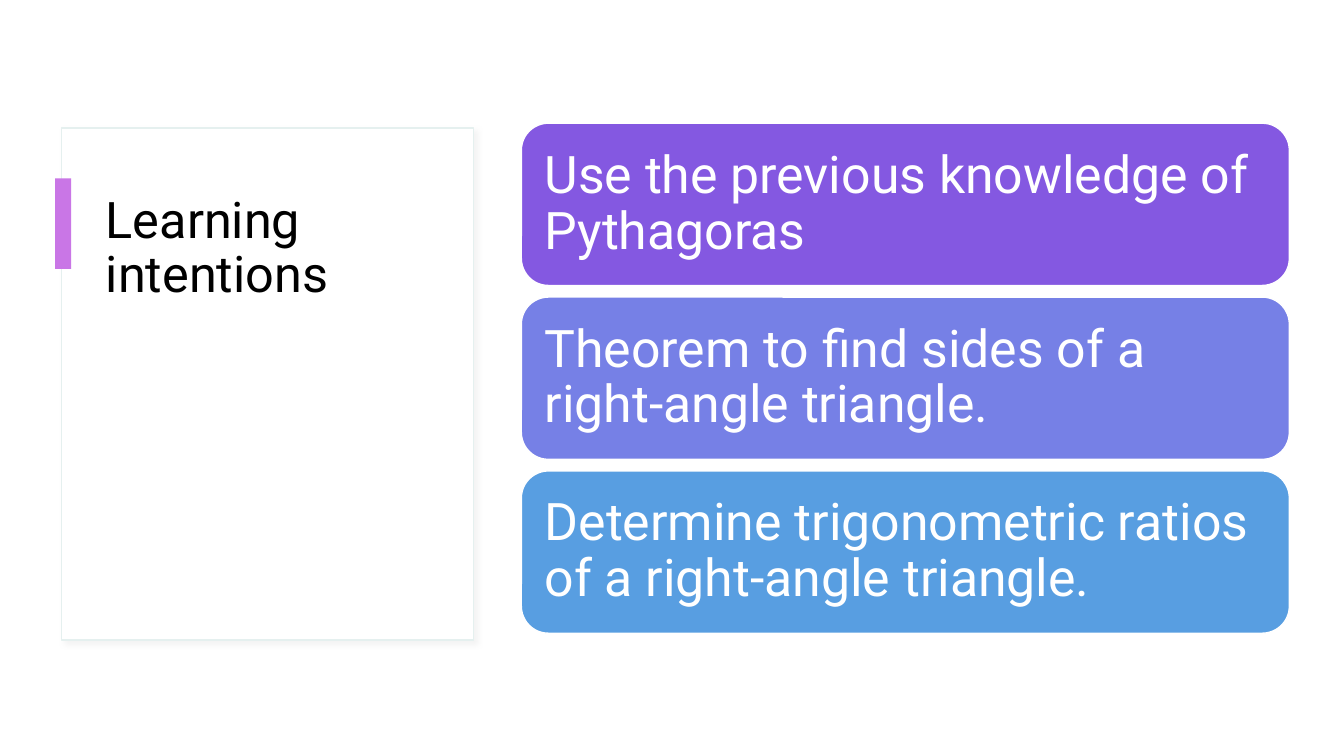
from dataclasses import dataclass

from lxml.etree import SubElement
from pptx import Presentation
from pptx.dml.color import RGBColor
from pptx.enum.shapes import MSO_SHAPE as Shape
from pptx.enum.text import MSO_ANCHOR as Anchor, MSO_AUTO_SIZE as AutoSize, PP_ALIGN as Align
from pptx.oxml.ns import qn
from pptx.shapes.autoshape import Shape as AutoShape
from pptx.slide import Slide
from pptx.text.text import TextFrame
from pptx.util import Pt

WHITE = RGBColor(0xFF, 0xFF, 0xFF)
BLACK = RGBColor(0x00, 0x00, 0x00)
PANEL_LINE = RGBColor(0xE5, 0xF0, 0xEF)
SHADOW = RGBColor(0xD9, 0xD9, 0xD9)
ACCENT = RGBColor(0xC9, 0x76, 0xE6)
PURPLE = RGBColor(0x84, 0x58, 0xE1)
INDIGO = RGBColor(0x76, 0x80, 0xE6)
BLUE = RGBColor(0x58, 0x9E, 0xE1)

FONT = "Roboto"
CARD_TOP = 88
CARD_PITCH = 124.2


@dataclass(frozen=True)
class Box:
    left: float
    top: float
    width: float
    height: float


@dataclass(frozen=True)
class Intention:
    text: str
    color: RGBColor


INTENTIONS = [
    Intention("Use the previous knowledge of Pythagoras", PURPLE),
    Intention("Theorem to find sides of a right-angle triangle.", INDIGO),
    Intention("Determine trigonometric ratios of a right-angle triangle.", BLUE),
]


def add_block(slide: Slide, kind: Shape, box: Box, fill: RGBColor,
              line: RGBColor | None = None) -> AutoShape:
    sp = slide.shapes.add_shape(kind, Pt(box.left), Pt(box.top), Pt(box.width), Pt(box.height))
    sp.shadow.inherit = False
    sp.fill.solid()
    sp.fill.fore_color.rgb = fill
    if line is None:
        sp.line.fill.background()
    else:
        sp.line.color.rgb = line
        sp.line.width = Pt(1)
    return sp


def add_soft_shadow(sp: AutoShape) -> None:
    effects = sp.element.spPr.find(qn("a:effectLst"))
    shadow = SubElement(effects, qn("a:outerShdw"), blurRad=str(Pt(4)), dist=str(Pt(3)),
                        dir=str(45 * 60000), algn="tl", rotWithShape="0")
    color = SubElement(shadow, qn("a:srgbClr"), val=str(SHADOW))
    SubElement(color, qn("a:alpha"), val="30000")


def write_text(tf: TextFrame, text: str, size: float, color: RGBColor, anchor: Anchor) -> None:
    tf.text = text
    tf.word_wrap = True
    tf.auto_size = AutoSize.NONE
    tf.vertical_anchor = anchor
    p = tf.paragraphs[0]
    p.alignment = Align.LEFT
    p.line_spacing = 0.9
    p.font.name = FONT
    p.font.size = Pt(size)
    p.font.color.rgb = color


def add_title(slide: Slide, text: str, box: Box) -> None:
    title = slide.shapes.title
    title.left, title.top = Pt(box.left), Pt(box.top)
    title.width, title.height = Pt(box.width), Pt(box.height)
    write_text(title.text_frame, text, 36, BLACK, Anchor.TOP)
    slide.shapes.element.append(title.element)


def add_card(slide: Slide, intention: Intention, top: float) -> None:
    sp = add_block(slide, Shape.ROUNDED_RECTANGLE, Box(372.4, top, 548.6, 115.9),
                   intention.color, WHITE)
    tf = sp.text_frame
    tf.margin_left = tf.margin_right = tf.margin_top = tf.margin_bottom = Pt(11)
    write_text(tf, intention.text, 37, WHITE, Anchor.MIDDLE)


def main() -> None:
    prs = Presentation()
    prs.slide_width, prs.slide_height = Pt(960), Pt(540)
    slide = prs.slides.add_slide(prs.slide_layouts[5])

    panel = add_block(slide, Shape.RECTANGLE, Box(43.9, 91.4, 294.5, 365.8), WHITE, PANEL_LINE)
    add_soft_shadow(panel)
    add_title(slide, "Learning intentions", Box(68.4, 135.4, 244, 277.2))
    add_block(slide, Shape.RECTANGLE, Box(39.4, 127.4, 11.5, 64.8), ACCENT)
    for i, intention in enumerate(INTENTIONS):
        add_card(slide, intention, CARD_TOP + i * CARD_PITCH)

    prs.save("out.pptx")


if __name__ == "__main__":
    main()
